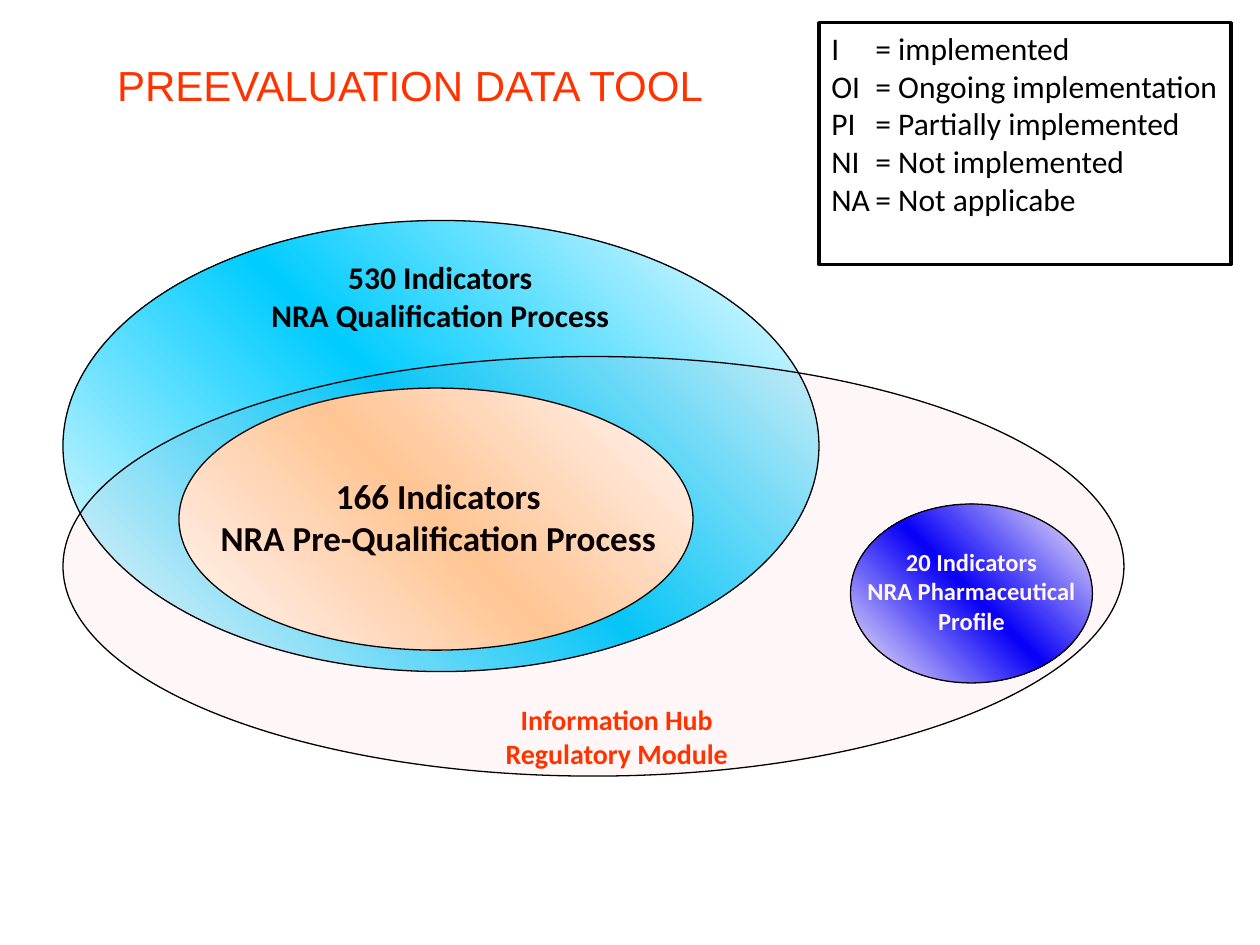
from copy import deepcopy

from lxml.etree import SubElement
from pptx import Presentation
from pptx.dml.color import RGBColor
from pptx.enum.shapes import MSO_SHAPE
from pptx.enum.text import MSO_ANCHOR, MSO_AUTO_SIZE, PP_ALIGN
from pptx.oxml.ns import qn
from pptx.util import Inches, Pt

THEME = {
    "white": RGBColor(0xFF, 0xFF, 0xFF),
    "black": RGBColor(0, 0, 0),
    "accent": RGBColor(0xFF, 0x33, 0),
    "hub": RGBColor(0xFF, 0, 0),
    "qualification": RGBColor(0, 0xCC, 0xFF),
    "prequalification": RGBColor(0xFF, 0xCC, 0x99),
    "pharma": RGBColor(0, 0, 0xFF),
    "title_size": Pt(24),
    "legend_size": Pt(18),
    "thin": Pt(0.75),
    "thick": Pt(2),
}


def add_ellipse(shapes, box, middle_color=None):
    """Outlined ellipse; a middle colour gives it a diagonal white-colour-white gradient."""
    ellipse = shapes.add_shape(MSO_SHAPE.OVAL, *map(Inches, box))
    ellipse.shadow.inherit = False
    ellipse.line.color.rgb = THEME["black"]
    ellipse.line.width = THEME["thin"]
    if middle_color:
        ellipse.fill.gradient()
        ellipse.fill.gradient_angle = 45
        stop_list = ellipse._element.spPr.find(qn("a:gradFill")).find(qn("a:gsLst"))
        stop_list.insert(1, deepcopy(stop_list[0]))
        colors = (THEME["white"], middle_color, THEME["white"])
        for stop, position, color in zip(ellipse.fill.gradient_stops, (0, 0.5, 1), colors):
            stop.position = position
            stop.color.rgb = color
    return ellipse


def add_label(shapes, box, lines, size, color):
    label = shapes.add_textbox(*map(Inches, box))
    frame = label.text_frame
    frame.word_wrap = False
    frame.auto_size = MSO_AUTO_SIZE.SHAPE_TO_FIT_TEXT
    frame.text = "\n".join(lines)
    font_format = {"name": "Calibri", "size": Pt(size), "bold": True}
    for paragraph in frame.paragraphs:
        paragraph.alignment = PP_ALIGN.CENTER
        for attribute, value in font_format.items():
            setattr(paragraph.font, attribute, value)
        paragraph.font.color.rgb = color


prs = Presentation()
prs.slide_width, prs.slide_height = Inches(10), Inches(7.5)
slide = prs.slides.add_slide(prs.slide_layouts[5])
shapes = slide.shapes

# Title
title = shapes.title
title.left, title.top, title.width, title.height = map(Inches, (0.83, 0.42, 8.75, 1))
title.text_frame.text = "PREEVALUATION DATA TOOL"
title.text_frame.vertical_anchor = MSO_ANCHOR.TOP
heading = title.text_frame.paragraphs[0]
heading.alignment = PP_ALIGN.LEFT
for attribute, value in {"name": "Arial", "size": THEME["title_size"], "bold": False}.items():
    setattr(heading.font, attribute, value)
heading.font.color.rgb = THEME["accent"]

# Nested indicator sets
add_ellipse(shapes, (0.5, 1.75, 6, 3.58), THEME["qualification"])
add_ellipse(shapes, (1.42, 3.08, 4.08, 2.08), THEME["prequalification"])
add_label(shapes, (1.48, 2, 4.03, 0.9),
          ["530 Indicators", "NRA Qualification Process"], 18, THEME["black"])
add_label(shapes, (1.53, 3.72, 3.9, 0.77),
          ["166 Indicators", "NRA Pre-Qualification Process"], 20, THEME["black"])

pharma = shapes.add_group_shape().shapes
add_ellipse(pharma, (6.75, 4, 1.92, 1.42), THEME["pharma"])
add_label(pharma, (6.72, 4.29, 1.98, 0.8),
          ["20 Indicators", "NRA Pharmaceutical", "Profile"], 14, THEME["white"])

# Information hub, a faint veil over the sets
hub = add_ellipse(shapes, (0.5, 2.83, 8.42, 3.33))
hub.fill.solid()
hub.fill.fore_color.rgb = THEME["hub"]
hub_color = hub._element.spPr.find(qn("a:solidFill")).find(qn("a:srgbClr"))
SubElement(hub_color, qn("a:alpha"), val="3000")
add_label(shapes, (3.87, 5.53, 2.05, 0.64),
          ["Information Hub", "Regulatory Module"], 16, THEME["accent"])

# Legend
statuses = {
    "I": "implemented",
    "OI": "Ongoing implementation",
    "PI": "Partially implemented",
    "NI": "Not implemented",
    "NA": "Not applicabe",
}
legend = shapes.add_shape(MSO_SHAPE.RECTANGLE, *map(Inches, (6.5, 0.18, 3.27, 1.92)))
legend.shadow.inherit = False
legend.fill.solid()
legend.fill.fore_color.rgb = THEME["white"]
legend.line.color.rgb = THEME["black"]
legend.line.width = THEME["thick"]
legend.text_frame.vertical_anchor = MSO_ANCHOR.TOP
legend.text_frame.word_wrap = True
legend.text_frame.text = "\n".join(f"{code}\t= {meaning}" for code, meaning in statuses.items())
for entry in legend.text_frame.paragraphs:
    entry.alignment = PP_ALIGN.LEFT
    tabs = SubElement(entry._p.get_or_add_pPr(), qn("a:tabLst"))
    SubElement(tabs, qn("a:tab"), pos=str(Inches(0.35)), algn="l")
    for attribute, value in {"name": "Calibri", "size": THEME["legend_size"]}.items():
        setattr(entry.font, attribute, value)
    entry.font.color.rgb = THEME["black"]

prs.save("out.pptx")
